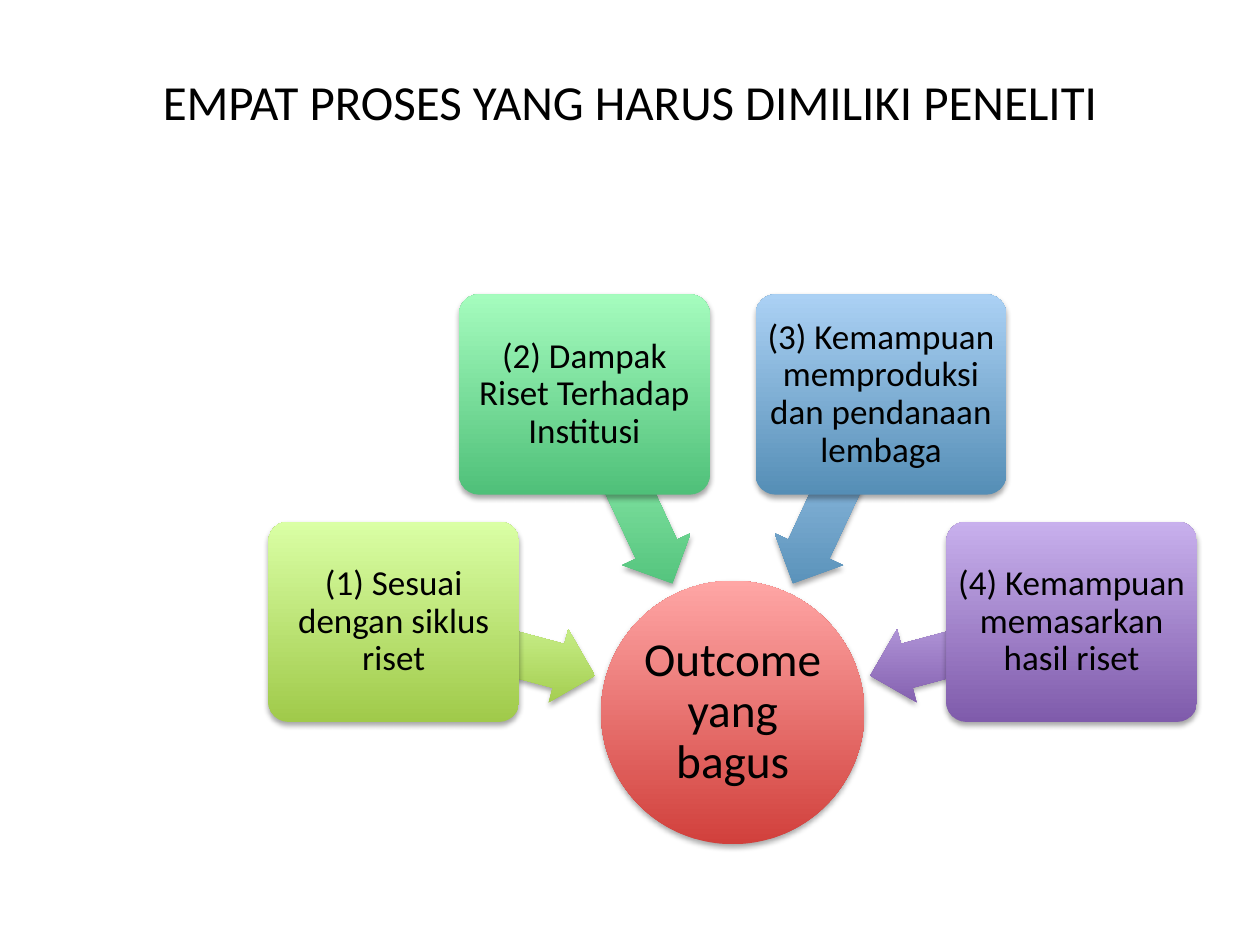
from math import cos, radians, sin

from lxml import etree
from pptx import Presentation
from pptx.dml.color import RGBColor
from pptx.enum.shapes import MSO_SHAPE
from pptx.enum.text import MSO_ANCHOR, PP_ALIGN
from pptx.oxml.ns import nsdecls, qn
from pptx.util import Inches, Pt

ELLIPSE, CARD, ARROW = MSO_SHAPE.OVAL, MSO_SHAPE.ROUNDED_RECTANGLE, MSO_SHAPE.LEFT_ARROW
MIDDLE, CENTER = MSO_ANCHOR.MIDDLE, PP_ALIGN.CENTER

THEME = {
    "font": "Calibri",
    "text": "000000",
    "sizes": {"title": 28, "hub": 27, "card": 20},
    # (bottom, top) of each vertical gradient
    "red": ("D1403C", "FFA6A5"),
    "lime": ("A0CA4A", "DAFFA5"),
    "green": ("4FC079", "A5FCBE"),
    "blue": ("558EB6", "ABD1F4"),
    "purple": ("7F5BAB", "C8B0ED"),
}
SHADOW = (
    f'<a:outerShdw {nsdecls("a")} blurRad="40000" dist="23000" dir="5400000" rotWithShape="0">'
    '<a:srgbClr val="000000"><a:alpha val="35000"/></a:srgbClr></a:outerShdw>'
)

deck = Presentation()
deck.slide_width, deck.slide_height = Inches(10), Inches(7.5)
page = deck.slides.add_slide(deck.slide_layouts[5])
UNIT = deck.slide_width / 100  # all lengths below are percent of the slide width


def write(shape, words, role, inset):
    frame = shape.text_frame
    frame.text = words
    margin = round(inset * UNIT)
    frame_format = {"word_wrap": True, "vertical_anchor": MIDDLE,
                    "margin_left": margin, "margin_right": margin,
                    "margin_top": margin, "margin_bottom": margin}
    for name, value in frame_format.items():
        setattr(frame, name, value)
    para = frame.paragraphs[0]
    para.alignment = CENTER
    para.line_spacing = 1 if role == "title" else 0.9
    span = para.runs[0]
    span.font.name = THEME["font"]
    span.font.size = Pt(THEME["sizes"][role])
    span.font.color.rgb = RGBColor.from_string(THEME["text"])


def add_part(kind, center_x, center_y, width, height, colour, adjustments=(), rotation=0):
    box = [round(value * UNIT) for value in
           (center_x - width / 2, center_y - height / 2, width, height)]
    shape = page.shapes.add_shape(kind, *box)
    shape.rotation = rotation
    for index, value in enumerate(adjustments):
        shape.adjustments[index] = value
    shape.line.fill.background()
    shape.fill.gradient()
    shape.fill.gradient_angle = 90
    for stop, tone in zip(shape.fill.gradient_stops, THEME[colour]):
        stop.color.rgb = RGBColor.from_string(tone)
    # Keep the gradient upright on turned arrows, and add a soft shadow below
    properties = shape.element.spPr
    properties.find(qn("a:gradFill")).set("rotWithShape", "0")
    shape.shadow.inherit = False
    properties.find(qn("a:effectLst")).append(etree.fromstring(SHADOW))
    return shape


# Title
title = page.shapes.title
title_box = {"left": 5, "top": 3, "width": 90, "height": 10.1}
for side, share in title_box.items():
    setattr(title, side, round(share * UNIT))
write(title, "EMPAT PROSES YANG HARUS DIMILIKI PENELITI", "title", 1)

# Central outcome
HUB_X, HUB_Y, HUB_SIZE = 58.15, 56.55, 20.9
hub = add_part(ELLIPSE, HUB_X, HUB_Y, HUB_SIZE, HUB_SIZE, "red")
write(hub, "Outcome yang bagus", "hub", 0.2)

# Four processes on an arc around the outcome, each with an arrow pointing inwards
ARROW_RADIUS, CARD_RADIUS = 19.56, 27.85
FIRST_ANGLE, ANGLE_STEP = 195, 50
processes = [
    ("(1) Sesuai dengan siklus riset", "lime"),
    ("(2) Dampak Riset Terhadap Institusi", "green"),
    ("(3) Kemampuan memproduksi dan pendanaan lembaga", "blue"),
    ("(4) Kemampuan memasarkan hasil riset", "purple"),
]
for index, (words, colour) in enumerate(processes):
    angle = FIRST_ANGLE + index * ANGLE_STEP
    across, down = cos(radians(angle)), sin(radians(angle))
    add_part(ARROW, HUB_X + ARROW_RADIUS * across, HUB_Y + ARROW_RADIUS * down,
             16.5, 6, colour, (0.6, 0.5), angle)
    card = add_part(CARD, HUB_X + CARD_RADIUS * across, HUB_Y + CARD_RADIUS * down,
                    19.9, 15.9, colour, (0.1,))
    write(card, words, "card", 0.4)

deck.save("out.pptx")
